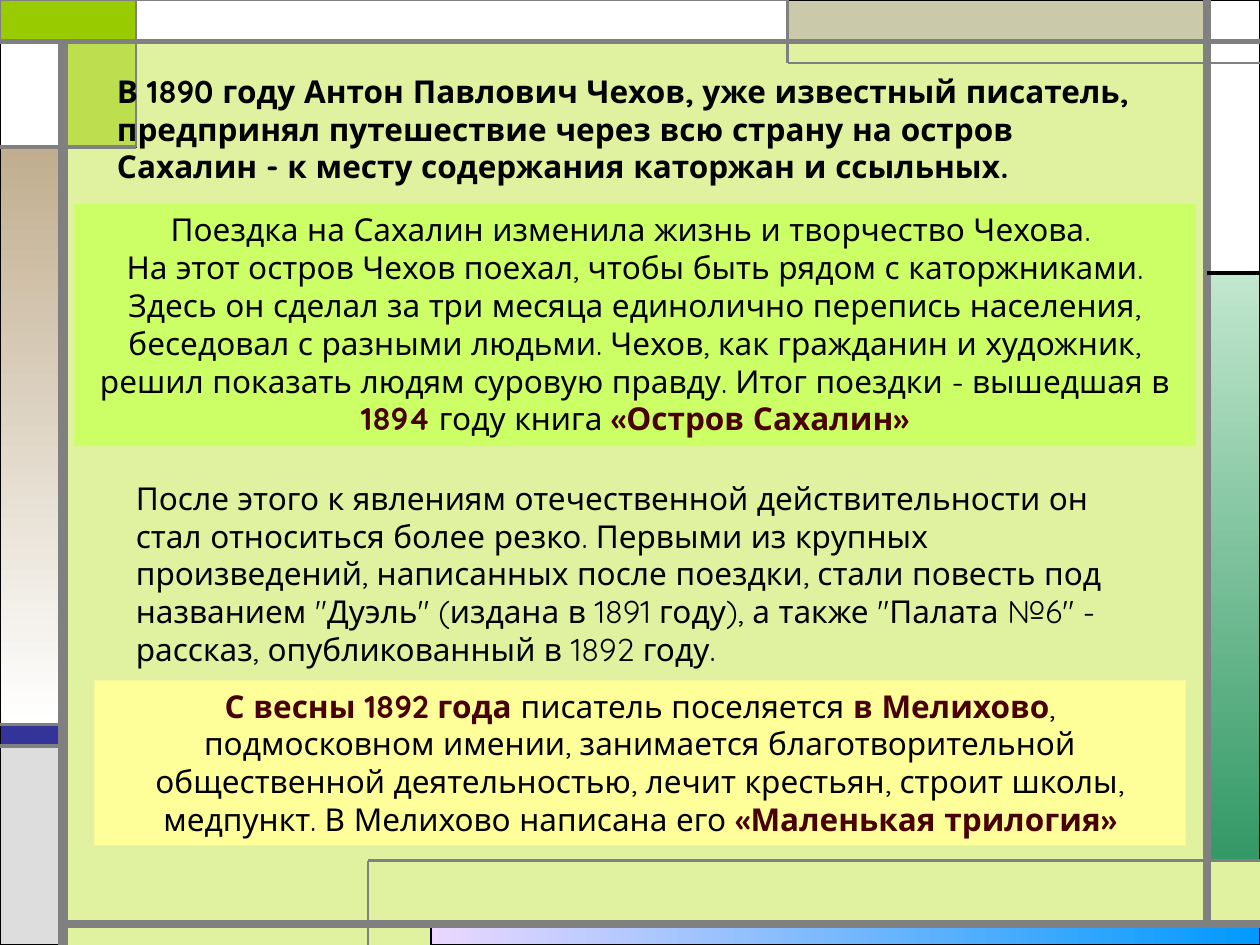
from typing import NamedTuple

from lxml.etree import SubElement
from pptx import Presentation
from pptx.dml.color import RGBColor
from pptx.enum.shapes import MSO_CONNECTOR, MSO_SHAPE
from pptx.enum.text import MSO_ANCHOR, PP_ALIGN
from pptx.oxml.ns import qn
from pptx.util import Inches, Pt

FONT = "Quicksand"
BLACK, GRAY, WHITE, MAROON = "000000", "808080", "FFFFFF", "480000"

# Grid of the frame
LEFT, RIGHT, TOP, BOTTOM = 0.5, 9.58, 0.33, 7.33
WIDTH, HEIGHT = 10, 7.5
CORNER_X, CORNER_Y = 1.08, 1.17
TAB_X, TAB_Y = 6.25, 0.5
BAND_TOP, BAND_BOTTOM = 5.75, 5.92
SIDE_TOP, SIDE_BOTTOM = 2.17, 6.83
FOOT_X = 2.92


class Panel(NamedTuple):
    """A frame block given by its edges; two colours make a gradient."""
    left: float
    top: float
    right: float
    bottom: float
    colors: tuple[str, ...]
    angle: int = 0
    opacity: int = 100
    line: str = BLACK
    line_width: float = 0.75


class Rule(NamedTuple):
    x1: float
    y1: float
    x2: float
    y2: float
    width: float
    color: str = GRAY


class Span(NamedTuple):
    text: str
    color: str = BLACK
    bold: bool = False


class Passage(NamedTuple):
    left: float
    top: float
    width: float
    height: float
    paragraphs: list[list[Span]]
    fill: str | None = None


PANELS = [
    Panel(3.42, BOTTOM, WIDTH, HEIGHT, ("EBD7FF", "0099FF")),
    Panel(RIGHT, SIDE_TOP, WIDTH, SIDE_BOTTOM, ("C1E7CE", "339966"), angle=270),
    Panel(0, BAND_TOP, LEFT, BAND_BOTTOM, ("333399",)),
    Panel(0, BAND_BOTTOM, LEFT, HEIGHT, ("DDDDDD",)),
    Panel(RIGHT, 0, WIDTH, SIDE_TOP, (WHITE,)),
    Panel(TAB_X, 0, RIGHT, TOP, ("CAC9AA",)),
    Panel(LEFT, TOP, CORNER_X, CORNER_Y, ("99CC00",), opacity=50),
    Panel(0, CORNER_Y, LEFT, BAND_TOP, ("C1AE8F", WHITE), angle=270),
    Panel(0, TOP, LEFT, CORNER_Y, (WHITE,)),
    Panel(0, 0, CORNER_X, TOP, ("99CC00",), line=GRAY, line_width=1.5),
    Panel(CORNER_X, 0, TAB_X, TOP, (WHITE,), line=GRAY),
]

RULES = [
    Rule(LEFT, HEIGHT, LEFT, TOP, 6),
    Rule(LEFT, BOTTOM, WIDTH, BOTTOM, 4.5),
    Rule(RIGHT, BOTTOM, RIGHT, 0, 4.5),
    Rule(0, TOP, WIDTH, TOP, 3),
    Rule(WIDTH, TAB_Y, TAB_X, TAB_Y, 1.5),
    Rule(TAB_X, TAB_Y, TAB_X, 0, 1.5),
    Rule(RIGHT, SIDE_TOP, WIDTH, SIDE_TOP, 2.25, BLACK),
    Rule(CORNER_X, 0, CORNER_X, CORNER_Y, 1.5),
    Rule(CORNER_X, CORNER_Y, 0, CORNER_Y, 2.25),
    Rule(FOOT_X, HEIGHT, FOOT_X, SIDE_BOTTOM, 1.5),
    Rule(FOOT_X, SIDE_BOTTOM, WIDTH, SIDE_BOTTOM, 1.5),
    Rule(LEFT, BAND_TOP, 0, BAND_TOP, 2.25),
    Rule(LEFT, BAND_BOTTOM, 0, BAND_BOTTOM, 2.25),
]

PASSAGES = [
    Passage(0.59, 1.62, 8.9, 1.92, [
        [Span("Поездка на Сахалин изменила жизнь и творчество Чехова. ")],
        [Span("На этот остров Чехов поехал, чтобы быть рядом с каторжниками. "
              "Здесь он сделал за три месяца единолично перепись населения, "
              "беседовал с разными людьми. Чехов, как гражданин и художник, "
              "решил показать людям суровую правду. Итог поездки - вышедшая в "),
         Span("1894", MAROON, True),
         Span(" году книга "),
         Span("«Остров Сахалин»", MAROON, True)],
    ], "CCFF66"),
    Passage(0.98, 3.75, 7.95, 1.62, [
        [Span("После этого к явлениям отечественной действительности он стал "
              "относиться более резко. Первыми из крупных произведений, "
              "написанных после поездки, стали повесть под названием \"Дуэль\" "
              "(издана в 1891 году), а также \"Палата №6\" - рассказ, "
              "опубликованный в 1892 году.")],
    ]),
    Passage(0.75, 5.4, 8.66, 1.31, [
        [Span("С весны 1892 года ", MAROON, True),
         Span("писатель поселяется "),
         Span("в Мелихово", MAROON, True),
         Span(", подмосковном имении, занимается благотворительной "
              "общественной деятельностью, лечит крестьян, строит школы, "
              "медпункт. В Мелихово написана его "),
         Span("«Маленькая трилогия»", MAROON, True)],
    ], "FFFF99"),
    Passage(0.83, 0.52, 8.35, 1.01, [
        [Span("В 1890 году Антон Павлович Чехов, уже известный писатель, "
              "предпринял путешествие через всю страну на остров Сахалин - "
              "к месту содержания каторжан и ссыльных.", bold=True)],
    ]),
]


def rgb(color: str) -> RGBColor:
    return RGBColor.from_string(color)


def draw_panel(shapes, panel: Panel) -> None:
    block = shapes.add_shape(
        MSO_SHAPE.RECTANGLE, Inches(panel.left), Inches(panel.top),
        Inches(panel.right - panel.left), Inches(panel.bottom - panel.top))
    block.shadow.inherit = False
    block.line.color.rgb = rgb(panel.line)
    block.line.width = Pt(panel.line_width)
    if len(panel.colors) > 1:
        block.fill.gradient()
        block.fill.gradient_angle = panel.angle
        for stop, color in zip(block.fill.gradient_stops, panel.colors):
            stop.color.rgb = rgb(color)
        return
    block.fill.solid()
    block.fill.fore_color.rgb = rgb(panel.colors[0])
    if panel.opacity < 100:
        color_xml = block._element.spPr.find(qn("a:solidFill"))[0]
        SubElement(color_xml, qn("a:alpha"), val=str(panel.opacity * 1000))


def draw_rule(shapes, rule: Rule) -> None:
    line = shapes.add_connector(
        MSO_CONNECTOR.STRAIGHT, Inches(rule.x1), Inches(rule.y1),
        Inches(rule.x2), Inches(rule.y2))
    line.line.color.rgb = rgb(rule.color)
    line.line.width = Pt(rule.width)
    SubElement(line._element.spPr, qn("a:effectLst"))


def draw_passage(shapes, passage: Passage) -> None:
    """Filled passages are centred blocks, the others plain text boxes."""
    bounds = [Inches(length) for length in passage[:4]]
    if passage.fill:
        box = shapes.add_shape(MSO_SHAPE.RECTANGLE, *bounds)
        box.shadow.inherit = False
        box.fill.solid()
        box.fill.fore_color.rgb = rgb(passage.fill)
        box.line.fill.background()
    else:
        box = shapes.add_textbox(*bounds)
    frame = box.text_frame
    frame.word_wrap = True
    frame.vertical_anchor = MSO_ANCHOR.TOP
    for index, spans in enumerate(passage.paragraphs):
        paragraph = frame.add_paragraph() if index else frame.paragraphs[0]
        paragraph.alignment = PP_ALIGN.CENTER if passage.fill else PP_ALIGN.LEFT
        for span in spans:
            run = paragraph.add_run()
            run.text = span.text
            run.font.name = FONT
            run.font.size = Pt(18)
            run.font.bold = span.bold
            run.font.color.rgb = rgb(span.color)


def main() -> None:
    deck = Presentation()
    deck.slide_width, deck.slide_height = Inches(WIDTH), Inches(HEIGHT)
    slide = deck.slides.add_slide(deck.slide_layouts[6])
    slide.background.fill.solid()
    slide.background.fill.fore_color.rgb = rgb("E0F2A0")
    for panel in PANELS:
        draw_panel(slide.shapes, panel)
    for rule in RULES:
        draw_rule(slide.shapes, rule)
    for passage in PASSAGES:
        draw_passage(slide.shapes, passage)
    deck.save("out.pptx")


if __name__ == "__main__":
    main()
